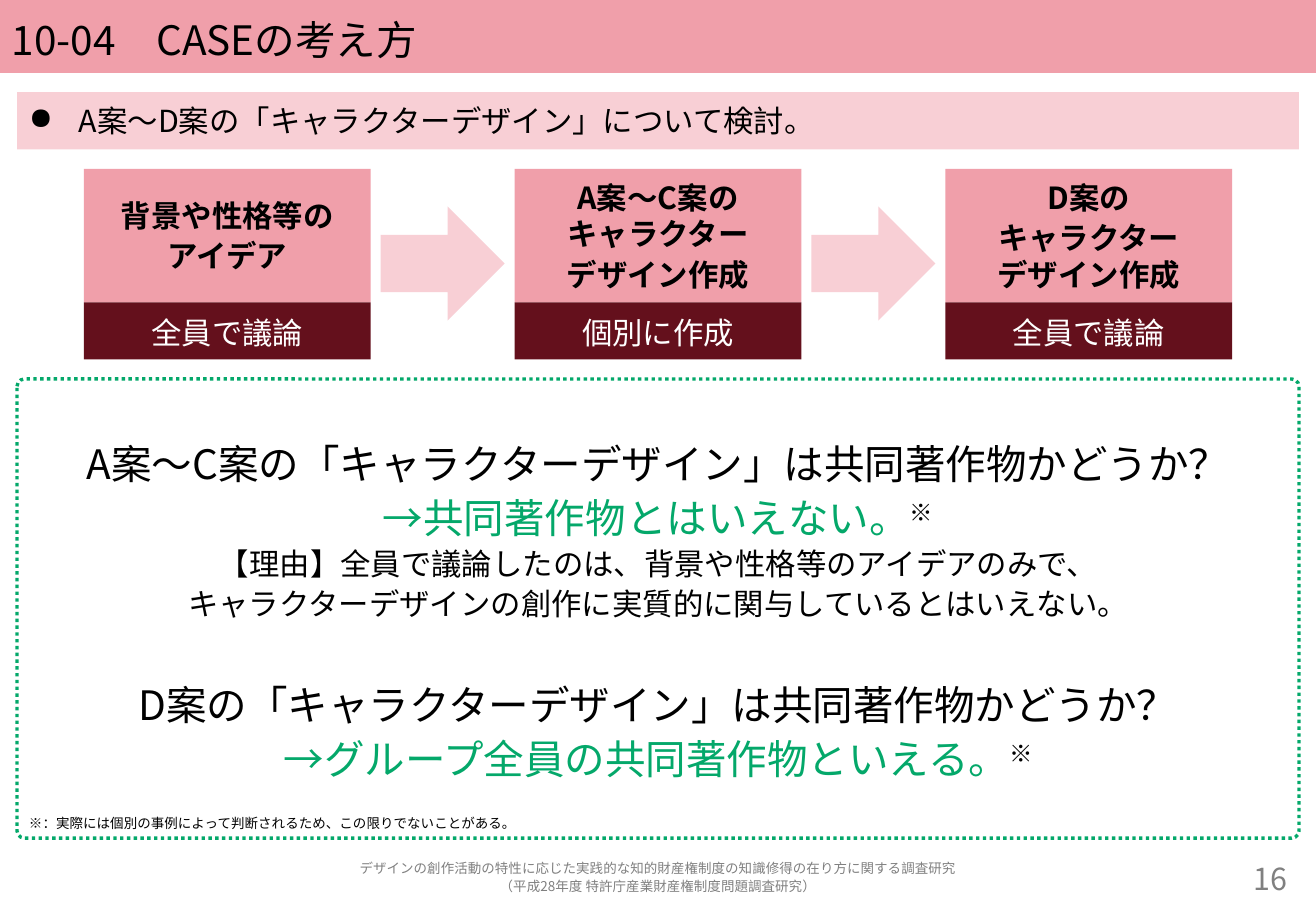
from dataclasses import dataclass

from lxml import etree
from pptx import Presentation
from pptx.dml.color import RGBColor
from pptx.enum.dml import MSO_LINE
from pptx.enum.shapes import MSO_SHAPE
from pptx.enum.text import MSO_ANCHOR, PP_ALIGN
from pptx.oxml.ns import qn
from pptx.util import Inches, Pt

RECT, ROUNDED, ARROW = MSO_SHAPE.RECTANGLE, MSO_SHAPE.ROUNDED_RECTANGLE, MSO_SHAPE.RIGHT_ARROW
LEFT, CENTER, RIGHT = PP_ALIGN.LEFT, PP_ALIGN.CENTER, PP_ALIGN.RIGHT
TOP, MIDDLE, BOTTOM = MSO_ANCHOR.TOP, MSO_ANCHOR.MIDDLE, MSO_ANCHOR.BOTTOM
DOTTED = MSO_LINE.ROUND_DOT


@dataclass(frozen=True)
class Theme:
    font: str = "Noto Sans CJK JP"
    pink: str = "F09FAA"
    pale: str = "F8CFD5"
    wine: str = "64101C"
    green: str = "04A86A"
    black: str = "000000"
    white: str = "FFFFFF"
    gray: str = "808080"
    large: int = 24
    medium: int = 18
    small: int = 8
    spacing: float = 1.1


THEME = Theme()
MARGIN, CONTENT_W = 0.14, 10.55
STEP_X, STEP_PITCH, STEP_W = 0.69, 3.545, 2.36
ARROW_W = 1.02

# Each step: (line, line spacing) pairs, then who does it
STEPS = [
    ([("背景や性格等の", 1.0), ("アイデア", 1.1)], "全員で議論"),
    ([("A案～C案の", 1.0), ("キャラクター", 1.0), ("デザイン作成", 1.1)], "個別に作成"),
    ([("D案の", 1.0), ("キャラクター", 1.1), ("デザイン作成", 1.0)], "全員で議論"),
]


def rgb(value):
    return RGBColor.from_string(value)


def add_box(slide, kind, x, y, w, h, fill=None):
    sp = slide.shapes.add_shape(kind, Inches(x), Inches(y), Inches(w), Inches(h))
    sp.shadow.inherit = False
    sp.line.fill.background()
    if fill:
        sp.fill.solid()
        sp.fill.fore_color.rgb = rgb(fill)
    else:
        sp.fill.background()
    return sp


def add_label(slide, x, y, w, h):
    return slide.shapes.add_textbox(Inches(x), Inches(y), Inches(w), Inches(h))


def prepare_text(sp, anchor=MIDDLE):
    tf = sp.text_frame
    tf.word_wrap = True
    tf.vertical_anchor = anchor
    return tf


def add_line(tf, text, size, color=THEME.black, align=CENTER, bold=False,
             spacing=THEME.spacing):
    """Write one paragraph, reusing the empty first one."""
    p = tf.paragraphs[0]
    if p.runs:
        p = tf.add_paragraph()
    p.alignment = align
    p.line_spacing = spacing
    font = p.font
    font.name, font.size, font.bold = THEME.font, Pt(size), bold
    font.color.rgb = rgb(color)
    latin = font._element.find(qn("a:latin"))
    east_asian = etree.Element(qn("a:ea"), typeface=THEME.font)
    latin.addnext(east_asian)
    p.add_run().text = text
    return p


def add_reference_mark(p):
    r = p.add_run()
    r.text = "※"
    r.font.color.rgb = rgb(THEME.black)
    r.font._element.set("baseline", "30000")


def add_bullet(p, indent):
    pPr = p._p.get_or_add_pPr()
    pPr.set("marL", str(Inches(indent)))
    pPr.set("indent", str(-Inches(indent)))
    bullet = etree.Element(qn("a:buChar"), char="●")
    pPr.find(qn("a:defRPr")).addprevious(bullet)


def add_heading(slide):
    tf = prepare_text(add_box(slide, RECT, 0, 0, 10.83, 0.6, THEME.pink))
    add_line(tf, "10-04\u3000CASEの考え方".replace("\u3000", "　"), THEME.large, align=LEFT)
    tf = prepare_text(add_box(slide, RECT, MARGIN, 0.76, CONTENT_W, 0.47, THEME.pale), TOP)
    p = add_line(tf, "A案～D案の「キャラクターデザイン」について検討。", THEME.medium, align=LEFT)
    add_bullet(p, 0.41)


def add_step(slide, x, lines, who):
    tf = prepare_text(add_box(slide, RECT, x, 1.39, STEP_W, 1.1, THEME.pink))
    for text, spacing in lines:
        add_line(tf, text, THEME.medium, bold=True, spacing=spacing)
    tf = prepare_text(add_box(slide, RECT, x, 2.49, STEP_W, 0.47, THEME.wine))
    add_line(tf, who, THEME.medium, THEME.white)


def add_process(slide):
    arrow_offset = (STEP_W + STEP_PITCH - ARROW_W) / 2
    for i, (lines, who) in enumerate(STEPS):
        x = STEP_X + i * STEP_PITCH
        add_step(slide, x, lines, who)
        if i < len(STEPS) - 1:
            add_box(slide, ARROW, x + arrow_offset, 1.7, ARROW_W, 0.94, THEME.pale)


def add_conclusion(slide):
    sp = add_box(slide, ROUNDED, MARGIN, 3.12, CONTENT_W, 3.78)
    sp.adjustments[0] = 0.016
    sp.line.color.rgb = rgb(THEME.green)
    sp.line.width = Pt(2)
    sp.line.dash_style = DOTTED
    tf = prepare_text(sp)
    add_line(tf, "A案～C案の「キャラクターデザイン」は共同著作物かどうか？", THEME.large)
    add_reference_mark(add_line(tf, "→共同著作物とはいえない。", THEME.large, THEME.green))
    add_line(tf, "【理由】全員で議論したのは、背景や性格等のアイデアのみで、", THEME.medium)
    add_line(tf, "キャラクターデザインの創作に実質的に関与しているとはいえない。", THEME.medium)
    p = add_line(tf, "D案の「キャラクターデザイン」は共同著作物かどうか？", THEME.large)
    p.space_before = Pt(32)
    add_reference_mark(
        add_line(tf, "→グループ全員の共同著作物といえる。", THEME.large, THEME.green))

    tf = prepare_text(add_label(slide, MARGIN, 6.58, CONTENT_W, 0.31), BOTTOM)
    add_line(tf, "※：実際には個別の事例によって判断されるため、この限りでないことがある。",
             THEME.small, align=LEFT)


def add_footer(slide):
    tf = prepare_text(add_label(slide, MARGIN, 7.06, CONTENT_W, 0.31))
    for text in (
        "デザインの創作活動の特性に応じた実践的な知的財産権制度の知識修得の在り方に関する調査研究",
        "（平成28年度 特許庁産業財産権制度問題調査研究）",
    ):
        add_line(tf, text, THEME.small, THEME.gray)
    tf = prepare_text(add_label(slide, 9.35, 7.06, 1.34, 0.31))
    add_line(tf, "16", THEME.medium, THEME.gray, RIGHT)


def main():
    prs = Presentation()
    prs.slide_width, prs.slide_height = Inches(10.83), Inches(7.5)
    slide = prs.slides.add_slide(prs.slide_layouts[6])
    add_heading(slide)
    add_process(slide)
    add_conclusion(slide)
    add_footer(slide)
    prs.save("out.pptx")


if __name__ == "__main__":
    main()
